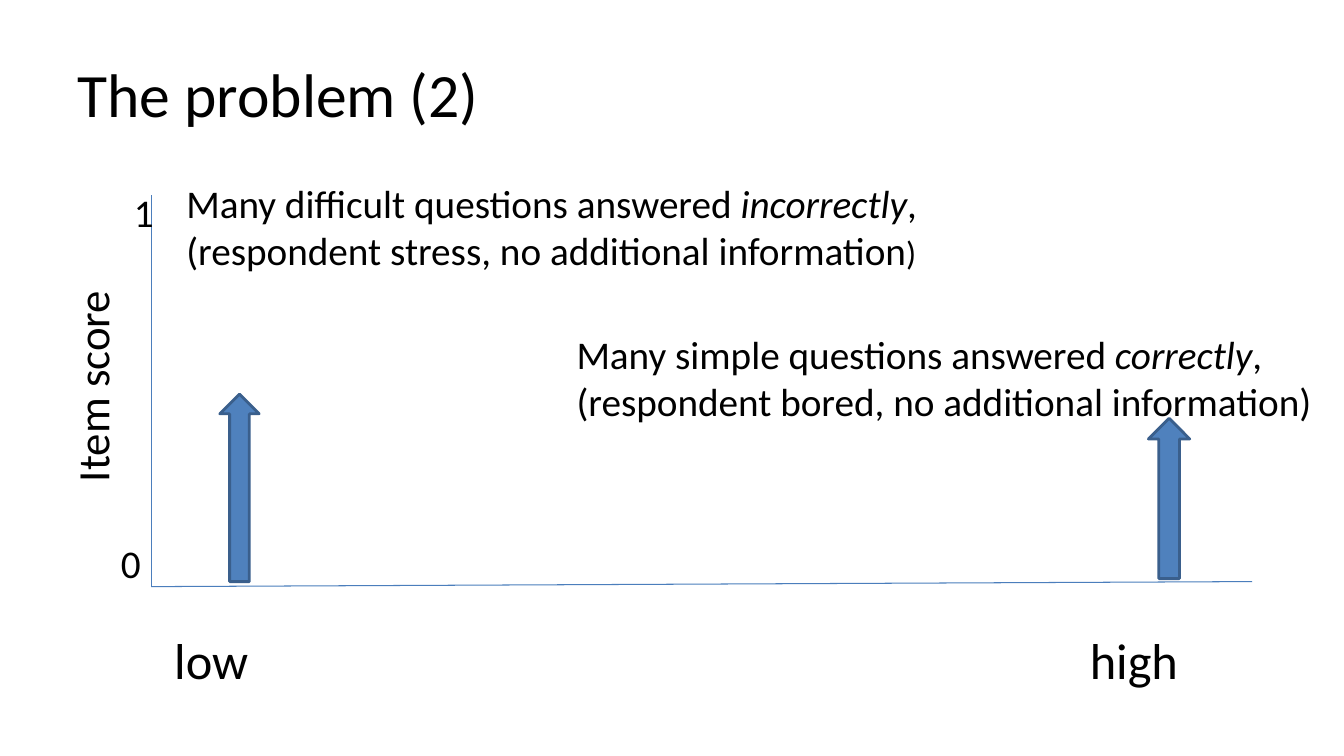
from lxml import etree
from pptx import Presentation
from pptx.dml.color import RGBColor
from pptx.enum.shapes import MSO_CONNECTOR, MSO_SHAPE
from pptx.enum.text import MSO_ANCHOR
from pptx.oxml.ns import qn
from pptx.util import Inches, Pt

LINE = MSO_CONNECTOR.STRAIGHT
ARROW = MSO_SHAPE.DOWN_ARROW
MIDDLE = MSO_ANCHOR.MIDDLE
BLACK = RGBColor(0x00, 0x00, 0x00)
BLUE = RGBColor(0x4F, 0x81, 0xBD)
EDGE = RGBColor(0x3A, 0x5F, 0x8C)
AXIS = RGBColor(0x4B, 0x7E, 0xBC)

deck = Presentation()
deck.slide_width = Inches(13.33)
deck.slide_height = Inches(7.5)
slide = deck.slides.add_slide(deck.slide_layouts[6])
shapes = slide.shapes


def add_text(left, top, width, height, size, lines):
    box = shapes.add_textbox(Inches(left), Inches(top), Inches(width), Inches(height))
    frame = box.text_frame
    frame.word_wrap = False
    frame.text = "\n".join("".join(parts) for parts in lines)
    for para, parts in zip(frame.paragraphs, lines):
        para.text = parts[0]
        for part in parts[1:]:
            para.add_run().text = part
        for run in para.runs:
            run.font.name = "Calibri"
            run.font.size = Pt(size)
            run.font.color.rgb = BLACK
    return box


title = add_text(0.67, 0.3, 12, 1.25, 44, [["The problem (2)"]])
title.text_frame.word_wrap = True
title.text_frame.vertical_anchor = MIDDLE

for end_x, end_y in [(12.42, 5.77), (1.5, 1.93)]:
    axis = shapes.add_connector(LINE, Inches(1.5), Inches(5.82), Inches(end_x), Inches(end_y))
    axis.line.color.rgb = AXIS
    axis.line.width = Pt(0.75)
    etree.SubElement(axis._element.spPr, qn("a:effectLst"))

for left, top, width, height, size, word in [
    (1.63, 6.19, 0.94, 0.71, 36, "low"),
    (10.71, 6.19, 1.09, 0.71, 36, "high"),
    (1.1, 5.3, 0.4, 0.57, 28, "0"),
    (1.23, 1.82, 0.4, 0.57, 28, "1"),
]:
    add_text(left, top, width, height, size, [[word]])

score = add_text(-0.15, 3.5, 2.12, 0.64, 32, [["Item score"]])
score.rotation = 270

stress = add_text(1.75, 1.73, 7.54, 1.04, 28, [
    ["Many difficult questions answered ", "incorrectly", ","],
    ["(respondent stress, no additional information", ")"],
])
stress.text_frame.paragraphs[1].runs[1].font.size = Pt(24)

bored = add_text(5.62, 3.23, 7.53, 1.04, 28, [
    ["Many simple questions answered ", "correctly", ","],
    ["(respondent bored, no additional information)"],
])

for note in (stress, bored):
    note.text_frame.paragraphs[0].runs[1].font.italic = True

for left, top, width, height in [(2.18, 3.91, 0.39, 1.86), (11.39, 4.15, 0.41, 1.59)]:
    arrow = shapes.add_shape(ARROW, Inches(left), Inches(top), Inches(width), Inches(height))
    arrow.rotation = 180
    arrow.shadow.inherit = False
    arrow.fill.solid()
    arrow.fill.fore_color.rgb = BLUE
    arrow.line.color.rgb = EDGE
    arrow.line.width = Pt(2)

deck.save("out.pptx")
